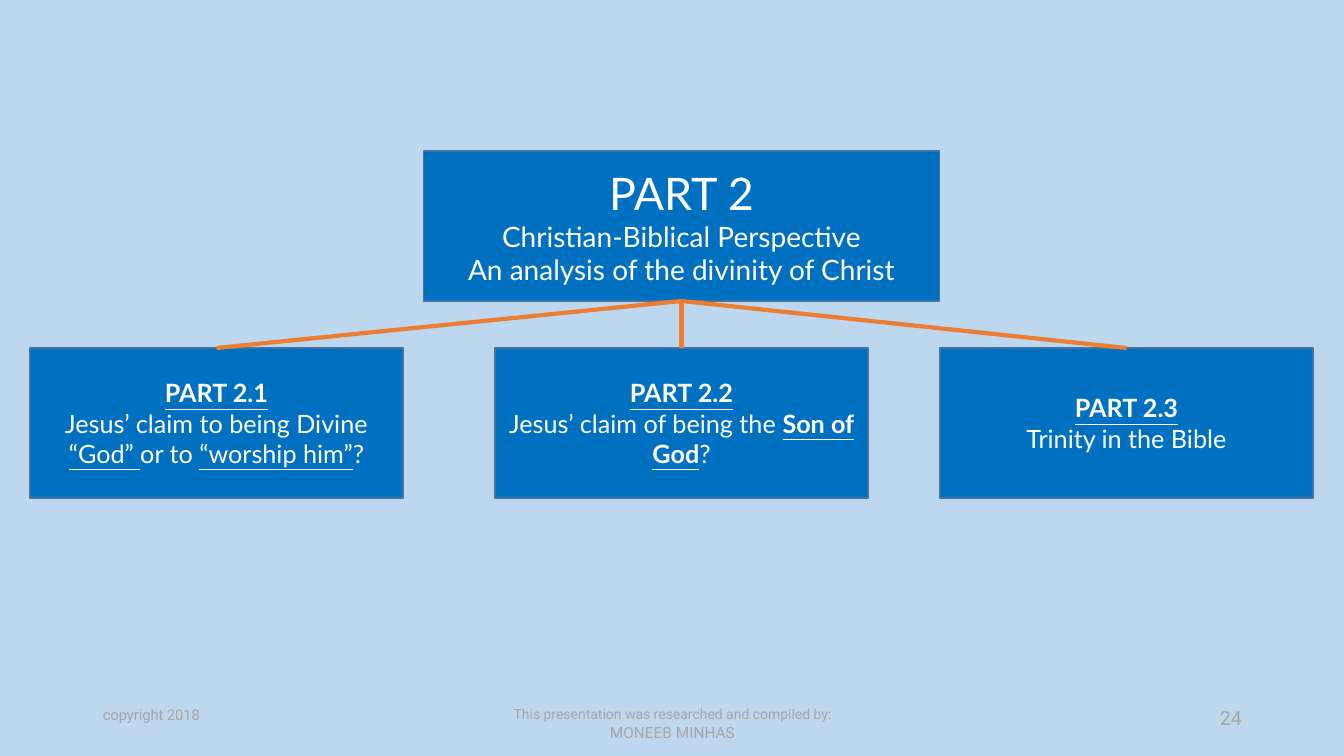
import pptx
import pptx.util
import pptx.dml.color
import pptx.enum.shapes
import pptx.enum.text
import pptx.oxml.ns
import lxml.etree

# Content: a paragraph is a list of (text, format) runs
HEAD = {"bold": True, "underline": True}
LINE = {"underline": True}
TITLE = [
    [("PART 2", {"size": 32})],
    [("Christian-Biblical Perspective", {})],
    [("An analysis of the divinity of Christ", {})],
]
PARTS = [
    (30, [[("PART 2.1", HEAD)],
          [("Jesus’ claim to being Divine ", {}), ("“God” ", LINE), ("or to ", {}),
           ("“worship him”", LINE), ("?", {})]]),
    (495, [[("PART 2.2", HEAD)],
           [("Jesus’ claim of being the ", {}), ("Son of God", HEAD), ("?", {})]]),
    (940, [[("PART 2.3", HEAD)],
           [("Trinity in the Bible", {})]]),
]
# Footer: left, width, alignment, paragraphs
FOOTER = [
    (93, 302, "LEFT", [[("copyright 2018", {"size": 10.5})]]),
    (446, 453, "CENTER", [
        [("This presentation was researched and compiled by:", {"size": 10})],
        [("MONEEB MINHAS", {"size": 11})]]),
    (950, 302, "RIGHT", [[("24", {"size": 14})]]),
]
COLORS = {"background": "BDD7EE", "box": "0070C0", "border": "43739E",
          "link": "ED7D31", "text": "FFFFFF", "footer": "A6A6A6"}

# Layout in px
SLIDE_W, SLIDE_H = 1344, 756
TITLE_W, PART_W, BOX_H = 516, 373, 150
TITLE_Y, PART_Y = 151, 348
FOOTER_Y, FOOTER_H = 701, 40


def px(n):
    return round(n * 914400 / 100.8)


def rgb(name):
    return pptx.dml.color.RGBColor.from_string(COLORS[name])


def write(tf, paragraphs, align="CENTER", anchor="MIDDLE", **defaults):
    tf.word_wrap = True
    tf.vertical_anchor = pptx.enum.text.MSO_ANCHOR[anchor]
    for i, runs in enumerate(paragraphs):
        p = tf.add_paragraph() if i else tf.paragraphs[0]
        p.alignment = pptx.enum.text.PP_ALIGN[align]
        for text, own in runs:
            style = {**defaults, **own}
            r = p.add_run()
            r.text = text
            r.font.name = style["font"]
            r.font.size = pptx.util.Pt(style["size"])
            r.font.color.rgb = rgb(style["color"])
            r.font.bold = style.get("bold", False)
            r.font.underline = style.get("underline", False)


def add_box(x, y, w, paragraphs, size):
    sp = s.shapes.add_shape(pptx.enum.shapes.MSO_SHAPE.RECTANGLE,
                            px(x), px(y), px(w), px(BOX_H))
    sp.shadow.inherit = False
    sp.fill.solid()
    sp.fill.fore_color.rgb = rgb("box")
    sp.line.color.rgb = rgb("border")
    sp.line.width = pptx.util.Pt(1)
    write(sp.text_frame, paragraphs, font="Lato", size=size, color="text")
    return sp


def link(parent, child):
    c = s.shapes.add_connector(pptx.enum.shapes.MSO_CONNECTOR.STRAIGHT, 0, 0, 0, 0)
    c.begin_connect(parent, 2)
    c.end_connect(child, 0)
    c.line.color.rgb = rgb("link")
    c.line.width = pptx.util.Pt(3)
    lxml.etree.SubElement(c._element.spPr, pptx.oxml.ns.qn("a:effectLst"))


prs = pptx.Presentation()
prs.slide_width, prs.slide_height = px(SLIDE_W), px(SLIDE_H)
s = prs.slides.add_slide(prs.slide_layouts[6])
s.background.fill.solid()
s.background.fill.fore_color.rgb = rgb("background")

# Tree: the title is centred over the middle part
title_x = PARTS[1][0] + (PART_W - TITLE_W) / 2
title = add_box(title_x, TITLE_Y, TITLE_W, TITLE, 20)
boxes = [add_box(x, PART_Y, PART_W, paragraphs, 18) for x, paragraphs in PARTS]
for box in boxes:
    link(title, box)

# Footer
for x, w, align, paragraphs in FOOTER:
    tb = s.shapes.add_textbox(px(x), px(FOOTER_Y), px(w), px(FOOTER_H))
    write(tb.text_frame, paragraphs, align, "TOP", font="Roboto", color="footer")

prs.save("out.pptx")
